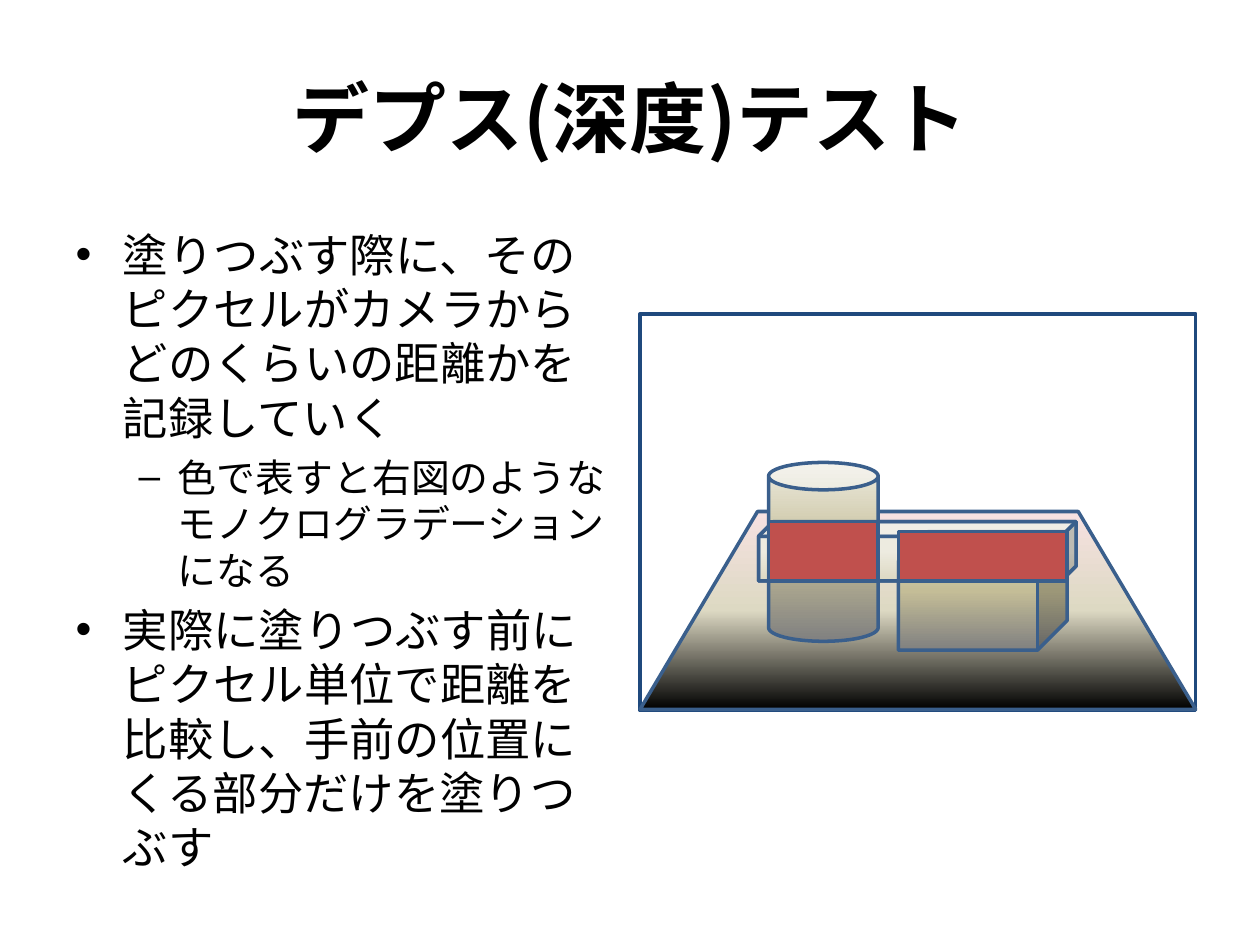
from lxml import etree
from pptx import Presentation
from pptx.dml.color import RGBColor
from pptx.enum.shapes import MSO_SHAPE
from pptx.enum.text import MSO_ANCHOR, MSO_AUTO_SIZE, PP_ALIGN
from pptx.oxml.ns import qn
from pptx.util import Inches, Pt

RECTANGLE = MSO_SHAPE.RECTANGLE
TRAPEZOID = MSO_SHAPE.TRAPEZOID
CUBE = MSO_SHAPE.CUBE
CAN = MSO_SHAPE.CAN
NO_AUTO_SIZE = MSO_AUTO_SIZE.NONE
MIDDLE = MSO_ANCHOR.MIDDLE
CENTER = PP_ALIGN.CENTER

THEME = {
    "font": "Noto Sans CJK JP",
    "text": "000000",
    "title_size": 44,
    "level_sizes": (25.9, 22.2),
    "line_spacing": 1.0,
    "space_before": 5,
    "line_width": 2,
    "frame_line": "1F497D",
    "object_line": "3A5F8C",
    "frame": "FFFFFF",
    "overlap": "C0504D",
    # gradient stops from bottom to top
    "floor": ("000000", "DDD9C3", "F6E1E1"),
    "far": ("DDD9C3", "EEECE1", "EEECE1"),
    "can": ("808080", "C4BD97", "EEECE1"),
    "near": ("808080", "C4BD97", "DDD9C3"),
}

TITLE = "デプス(深度)テスト"
TITLE_BOX = (0.5, 0.3, 9, 1.25)
BODY = [
    (0, "塗りつぶす際に、そのピクセルがカメラからどのくらいの距離かを記録していく"),
    (1, "色で表すと右図のようなモノクログラデーションになる"),
    (0, "実際に塗りつぶす前にピクセル単位で距離を比較し、手前の位置にくる部分だけを塗りつぶす"),
]
BODY_BOX = (0.5, 1.75, 4.42, 4.95)

FRAME = (5.08, 2.49, 4.41, 3.15)
FLOOR = (5.08, 4.06, 4.41, 1.57)
FAR_BOX = (6.02, 4.14, 2.52, 0.47)
CYLINDER = (6.1, 3.67, 0.87, 1.42)
NEAR_BOX = (7.13, 4.22, 1.34, 0.94)


def overlap(front, back):
    """Box shared by two boxes, as wide as the front one."""
    top = max(front[1], back[1])
    bottom = min(front[1] + front[3], back[1] + back[3])
    return front[0], top, front[2], bottom - top


# preset, box, fill, opacity in percent; from back to front
SCENE = [
    (RECTANGLE, FRAME, "frame", 100),
    (TRAPEZOID, FLOOR, "floor", 100),
    (CUBE, FAR_BOX, "far", 100),
    (CAN, CYLINDER, "can", 100),
    (CUBE, NEAR_BOX, "near", 100),
    (CUBE, FAR_BOX, "far", 50),
    (RECTANGLE, overlap(CYLINDER, FAR_BOX), "overlap", 100),
    (RECTANGLE, overlap(NEAR_BOX, FAR_BOX), "overlap", 100),
]


def place(shape, box):
    shape.left, shape.top, shape.width, shape.height = map(Inches, box)


def format_runs(paragraph, size, bold=False):
    for run in paragraph.runs:
        font = run.font
        font.size, font.bold, font.name = Pt(size), bold, THEME["font"]
        font.color.rgb = RGBColor.from_string(THEME["text"])
        latin = run._r.rPr.find(qn("a:latin"))
        east_asian = etree.Element(qn("a:ea"), typeface=THEME["font"])
        latin.addnext(east_asian)


def fill_gradient(shape, colors, opacity):
    """Evenly spaced stops running from bottom to top."""
    shape.fill.gradient()
    shape.fill.gradient_angle = 90
    stops = shape._element.spPr.find(qn("a:gradFill")).find(qn("a:gsLst"))
    for stop in list(stops):
        stops.remove(stop)
    for index, color in enumerate(colors):
        position = 100000 * index // (len(colors) - 1)
        stop = etree.SubElement(stops, qn("a:gs"), pos=str(position))
        value = etree.SubElement(stop, qn("a:srgbClr"), val=color)
        if opacity < 100:
            etree.SubElement(value, qn("a:alpha"), val=str(opacity * 1000))


def add_title(slide):
    title = slide.shapes.title
    place(title, TITLE_BOX)
    frame = title.text_frame
    frame.text = TITLE
    frame.auto_size = NO_AUTO_SIZE
    frame.vertical_anchor = MIDDLE
    frame.paragraphs[0].alignment = CENTER
    format_runs(frame.paragraphs[0], THEME["title_size"], bold=True)


def add_body(slide):
    body = slide.placeholders[1]
    place(body, BODY_BOX)
    frame = body.text_frame
    frame.text = "\n".join(text for _, text in BODY)
    frame.auto_size = NO_AUTO_SIZE
    for paragraph, (level, _) in zip(frame.paragraphs, BODY):
        paragraph.level = level
        paragraph.line_spacing = THEME["line_spacing"]
        paragraph.space_before = Pt(THEME["space_before"])
        format_runs(paragraph, THEME["level_sizes"][level])


def add_scene(slide):
    for preset, box, fill, opacity in SCENE:
        shape = slide.shapes.add_shape(preset, *map(Inches, box))
        shape.shadow.inherit = False
        if preset == TRAPEZOID:
            shape.adjustments[0] = 0.594
        if preset == RECTANGLE:
            shape.fill.solid()
            shape.fill.fore_color.rgb = RGBColor.from_string(THEME[fill])
        else:
            fill_gradient(shape, THEME[fill], opacity)
        line = "frame_line" if fill == "frame" else "object_line"
        shape.line.color.rgb = RGBColor.from_string(THEME[line])
        shape.line.width = Pt(THEME["line_width"])


def main():
    presentation = Presentation()
    presentation.slide_width = Inches(10)
    presentation.slide_height = Inches(7.5)
    slide = presentation.slides.add_slide(presentation.slide_layouts[1])
    add_title(slide)
    add_body(slide)
    add_scene(slide)
    presentation.save("out.pptx")


if __name__ == "__main__":
    main()
